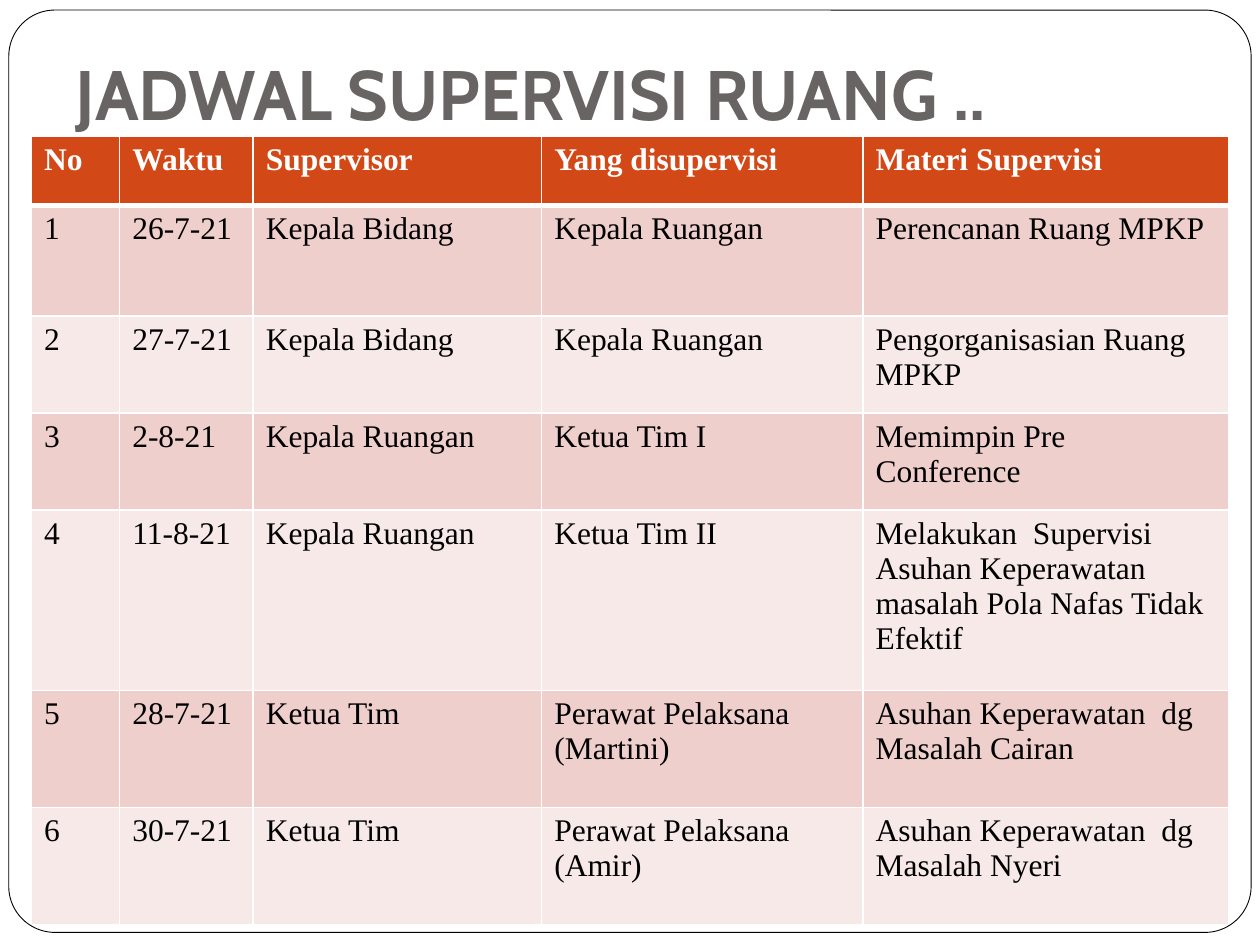
from dataclasses import dataclass

from lxml.etree import SubElement
from pptx import Presentation
from pptx.dml.color import RGBColor
from pptx.enum.shapes import MSO_SHAPE
from pptx.enum.text import MSO_ANCHOR, MSO_AUTO_SIZE, PP_ALIGN
from pptx.oxml.ns import qn
from pptx.util import Inches, Pt


@dataclass(frozen=True)
class Theme:
    title_font: str = "Cabin"
    table_font: str = "Times New Roman"
    title_size: int = 40
    table_size: int = 18
    title: str = "696464"
    header: str = "D34817"
    bands: tuple = ("EFCFCC", "F7E9E8")
    white: str = "FFFFFF"
    black: str = "000000"
    frame_line: float = 0.5
    grid_line: int = 1
    header_line: int = 3


THEME = Theme()

COLUMN_WIDTHS = (0.7, 1.06, 2.29, 2.55, 2.9)
ROW_HEIGHTS = (0.55, 0.88, 0.77, 0.77, 1.43, 0.93, 0.93)
SCHEDULE = (
    ("No", "Waktu", "Supervisor", "Yang disupervisi", "Materi Supervisi"),
    ("1", "26-7-21", "Kepala Bidang", "Kepala Ruangan", "Perencanan Ruang MPKP"),
    ("2", "27-7-21", "Kepala Bidang", "Kepala Ruangan", "Pengorganisasian Ruang  MPKP"),
    ("3", "2-8-21", "Kepala Ruangan", "Ketua Tim I", "Memimpin Pre Conference"),
    ("4", "11-8-21", "Kepala Ruangan", "Ketua Tim II",
     "Melakukan  Supervisi Asuhan Keperawatan  masalah Pola Nafas Tidak Efektif"),
    ("5", "28-7-21", "Ketua Tim", "Perawat Pelaksana\n(Martini)",
     "Asuhan Keperawatan  dg Masalah Cairan"),
    ("6", "30-7-21", "Ketua Tim", "Perawat Pelaksana\n(Amir)",
     "Asuhan Keperawatan  dg Masalah Nyeri"),
)


def paint(fill, color):
    fill.solid()
    fill.fore_color.rgb = RGBColor.from_string(color)


def add_run(paragraph, text, font, size, color, bold):
    run = paragraph.add_run()
    run.text = text
    run.font.name = font
    run.font.size = Pt(size)
    run.font.bold = bold
    run.font.color.rgb = RGBColor.from_string(color)


def add_frame(slide):
    """Draw the rounded page border behind everything else."""
    frame = slide.shapes.add_shape(
        MSO_SHAPE.ROUNDED_RECTANGLE, Inches(0.07), Inches(0.08), Inches(9.86), Inches(7.32)
    )
    frame.adjustments[0] = 0.05
    frame.shadow.inherit = False
    paint(frame.fill, THEME.white)
    paint(frame.line.fill, THEME.black)
    frame.line.width = Pt(THEME.frame_line)
    slide.shapes._spTree.insert(2, frame._element)


def set_title(slide, text):
    title = slide.shapes.title
    title.left, title.top = Inches(0.5), Inches(0.25)
    title.width, title.height = Inches(9), Inches(0.92)
    box = title.text_frame
    box.word_wrap = True
    box.auto_size = MSO_AUTO_SIZE.NONE
    box.vertical_anchor = MSO_ANCHOR.BOTTOM
    box.margin_left = box.margin_right = box.margin_bottom = Inches(0.1)
    box.margin_top = Inches(0.05)
    paragraph = box.paragraphs[0]
    paragraph.alignment = PP_ALIGN.LEFT
    add_run(paragraph, text, THEME.title_font, THEME.title_size, THEME.title, True)


def set_borders(cell, top, bottom):
    widths = {"a:lnL": THEME.grid_line, "a:lnR": THEME.grid_line, "a:lnT": top, "a:lnB": bottom}
    properties = cell._tc.get_or_add_tcPr()
    for tag, width in widths.items():
        line = SubElement(properties, qn(tag), w=str(Pt(width)))
        fill = SubElement(line, qn("a:solidFill"))
        SubElement(fill, qn("a:srgbClr"), val=THEME.white)


def fill_cell(cell, text, row):
    is_header = row == 0
    set_borders(
        cell,
        top=THEME.header_line if row == 1 else THEME.grid_line,
        bottom=THEME.header_line if is_header else THEME.grid_line,
    )
    paint(cell.fill, THEME.header if is_header else THEME.bands[(row - 1) % 2])
    color = THEME.white if is_header else THEME.black
    for index, line in enumerate(text.split("\n")):
        box = cell.text_frame
        paragraph = box.add_paragraph() if index else box.paragraphs[0]
        add_run(paragraph, line, THEME.table_font, THEME.table_size, color, is_header)


def add_schedule(slide):
    table = slide.shapes.add_table(
        len(SCHEDULE), len(COLUMN_WIDTHS),
        Inches(0.25), Inches(1.08), Inches(sum(COLUMN_WIDTHS)), Inches(sum(ROW_HEIGHTS)),
    ).table
    for column, width in zip(table.columns, COLUMN_WIDTHS):
        column.width = Inches(width)
    for row, height in zip(table.rows, ROW_HEIGHTS):
        row.height = Inches(height)
    for row, entries in enumerate(SCHEDULE):
        for column, text in enumerate(entries):
            fill_cell(table.cell(row, column), text, row)


def main():
    presentation = Presentation()
    presentation.slide_width, presentation.slide_height = Inches(10), Inches(7.5)
    slide = presentation.slides.add_slide(presentation.slide_layouts.get_by_name("Title Only"))
    paint(slide.background.fill, THEME.white)
    add_frame(slide)
    set_title(slide, "JADWAL SUPERVISI RUANG ..")
    add_schedule(slide)
    presentation.save("out.pptx")


if __name__ == "__main__":
    main()
